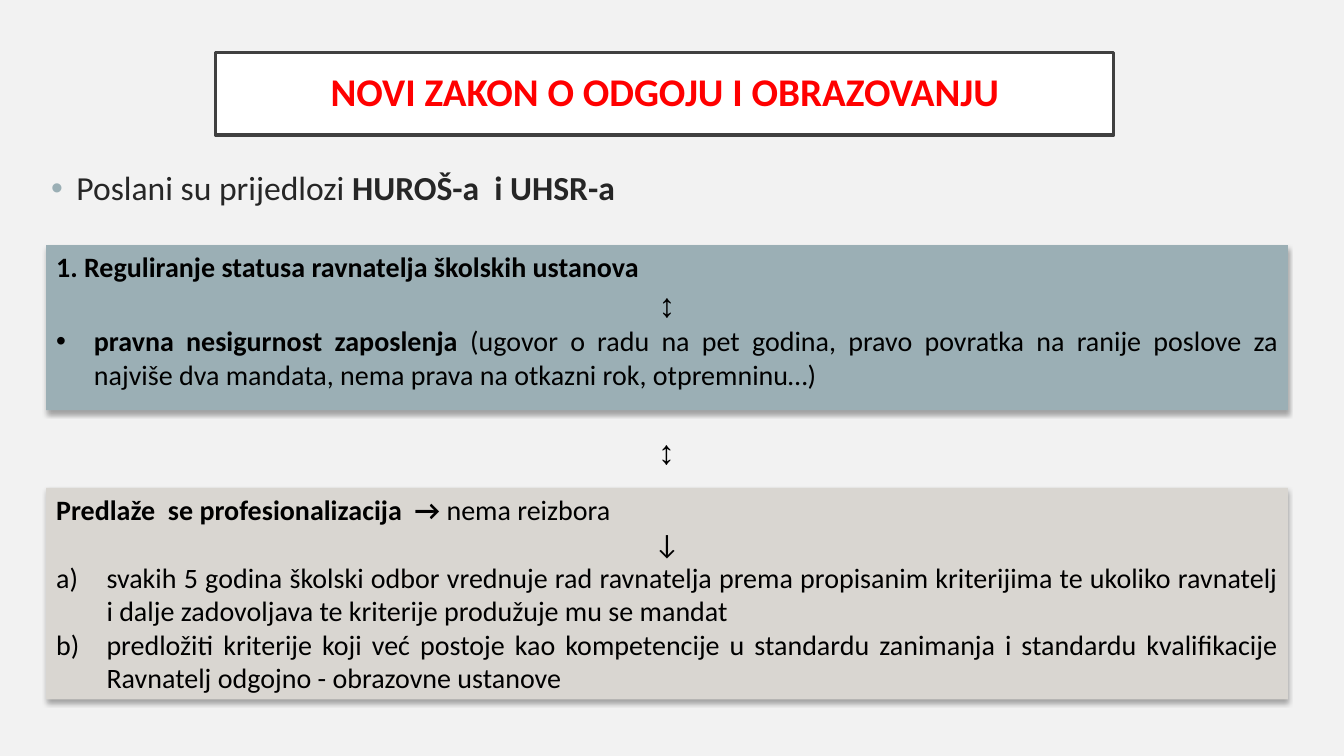
from lxml import etree
from pptx import Presentation
from pptx.dml.color import RGBColor
from pptx.enum.shapes import MSO_SHAPE
from pptx.enum.text import MSO_ANCHOR, PP_ALIGN
from pptx.oxml.ns import qn
from pptx.util import Pt

RECTANGLE = MSO_SHAPE.RECTANGLE
TOP, MIDDLE = MSO_ANCHOR.TOP, MSO_ANCHOR.MIDDLE
LEFT, CENTER, JUSTIFY = PP_ALIGN.LEFT, PP_ALIGN.CENTER, PP_ALIGN.JUSTIFY
BLACK, SLATE = "000000", "9BAFB5"
BODY, NARROW = "Calibri", "Arial Narrow"
BOX_LEFT, BOX_WIDTH = 33, 887


def rgb(value):
    return RGBColor.from_string(value)


def add_node(parent, tag, **attributes):
    node = etree.SubElement(parent, qn(tag))
    for key, value in attributes.items():
        node.set(key, str(value))
    return node


class ProposalSlide:
    def __init__(self, presentation, background):
        self.slide = presentation.slides.add_slide(presentation.slide_layouts[6])
        fill = self.slide.background.fill
        fill.solid()
        fill.fore_color.rgb = rgb(background)

    def panel(self, left, top, width, height, fill, anchor=TOP, border=None):
        panel = self.slide.shapes.add_shape(
            RECTANGLE, Pt(left), Pt(top), Pt(width), Pt(height))
        panel.shadow.inherit = False
        panel.fill.solid()
        panel.fill.fore_color.rgb = rgb(fill)
        if border:
            panel.line.color.rgb = rgb(border)
            panel.line.width = Pt(2.5)
        else:
            panel.line.fill.background()
        panel.text_frame.word_wrap = True
        panel.text_frame.vertical_anchor = anchor
        return panel

    def shadowed_panel(self, top, height, fill):
        panel = self.panel(BOX_LEFT, top, BOX_WIDTH, height, fill)
        effects = panel.element.spPr.find(qn("a:effectLst"))
        shadow = add_node(effects, "a:outerShdw", blurRad=Pt(3.5), dist=Pt(2.2),
                          dir=90 * 60000, rotWithShape=0)
        color = add_node(shadow, "a:srgbClr", val=BLACK)
        add_node(color, "a:alpha", val=32000)
        return panel.text_frame

    def text_box(self, left, top, width, height, wrap=True):
        box = self.slide.shapes.add_textbox(Pt(left), Pt(top), Pt(width), Pt(height))
        box.text_frame.word_wrap = wrap
        return box.text_frame

    def paragraph(self, frame, bold_text="", plain_text="", plain_first=False,
                  size=20, font=BODY, color=BLACK, align=JUSTIFY, indent=0,
                  bullet=None, bullet_color=None, before=None, spacing=None):
        first = frame.paragraphs[0]
        paragraph = frame.add_paragraph() if first.runs else first
        paragraph.alignment = align
        if spacing:
            paragraph.line_spacing = spacing
        if before:
            paragraph.space_before = Pt(before)
        if bullet:
            self.bullet(paragraph, bullet, indent, bullet_color)
        pieces = [(bold_text, True), (plain_text, False)]
        if plain_first:
            pieces.reverse()
        pieces = [piece for piece in pieces if piece[0]]
        for text, bold in pieces:
            run = paragraph.add_run()
            run.text = text
            if len(pieces) > 1:
                run.font.bold = bold
        if len(pieces) == 1:
            paragraph.font.bold = pieces[0][1]
        paragraph.font.size = Pt(size)
        paragraph.font.name = font
        paragraph.font.color.rgb = rgb(color)

    def bullet(self, paragraph, bullet, indent, color):
        properties = paragraph._p.get_or_add_pPr()
        properties.set("marL", str(Pt(indent)))
        properties.set("indent", str(Pt(-indent)))
        if color:
            add_node(add_node(properties, "a:buClr"), "a:srgbClr", val=color)
        if bullet == "•":
            add_node(properties, "a:buFont", typeface="Arial")
            add_node(properties, "a:buChar", char=bullet)
        else:
            add_node(properties, "a:buAutoNum", type=bullet)


def main():
    presentation = Presentation()
    presentation.slide_width, presentation.slide_height = Pt(960), Pt(540)
    page = ProposalSlide(presentation, "F2F2F2")

    intro = page.text_box(29.5, 116, 891.5, 48)
    page.paragraph(intro, "HUROŠ-a  i UHSR-a", "Poslani su prijedlozi ", plain_first=True,
                   size=24, color="262626", align=LEFT, indent=18,
                   bullet="•", bullet_color=SLATE, before=10)

    status = page.shadowed_panel(175, 118, SLATE)
    page.paragraph(status, "1. Reguliranje statusa ravnatelja školskih ustanova")
    page.paragraph(status, "↕", size=24, font=NARROW, align=CENTER)
    page.paragraph(status, "pravna nesigurnost zaposlenja ",
                   "(ugovor o radu na pet godina, pravo povratka na ranije poslove "
                   "za najviše dva mandata, nema prava na otkazni rok, otpremninu…)",
                   indent=27, bullet="•")

    proposal = page.shadowed_panel(348.5, 151, "D9D6D1")
    page.paragraph(proposal, "Predlaže  se profesionalizacija  → ", "nema reizbora")
    page.paragraph(proposal, plain_text="↓", align=CENTER)
    for measure in (
        "svakih 5 godina školski odbor vrednuje rad ravnatelja prema propisanim "
        "kriterijima te ukoliko ravnatelj i dalje zadovoljava te kriterije "
        "produžuje mu se mandat",
        "predložiti kriterije koji već postoje kao kompetencije u standardu "
        "zanimanja i standardu kvalifikacije Ravnatelj odgojno - obrazovne ustanove",
    ):
        page.paragraph(proposal, plain_text=measure, indent=36, bullet="alphaLcParenR")

    link = page.text_box(463, 304, 27, 36, wrap=False)
    page.paragraph(link, "↕", size=24, font=NARROW, align=LEFT)

    title = page.panel(154, 37.5, 641.5, 59, "FFFFFF", MIDDLE, "404040").text_frame
    title.margin_left = title.margin_right = Pt(14.4)
    title.margin_top = title.margin_bottom = Pt(14.4)
    page.paragraph(title, "NOVI ZAKON O ODGOJU I OBRAZOVANJU", size=28,
                   color="FF0000", align=CENTER, spacing=0.9)

    presentation.save("out.pptx")


if __name__ == "__main__":
    main()
